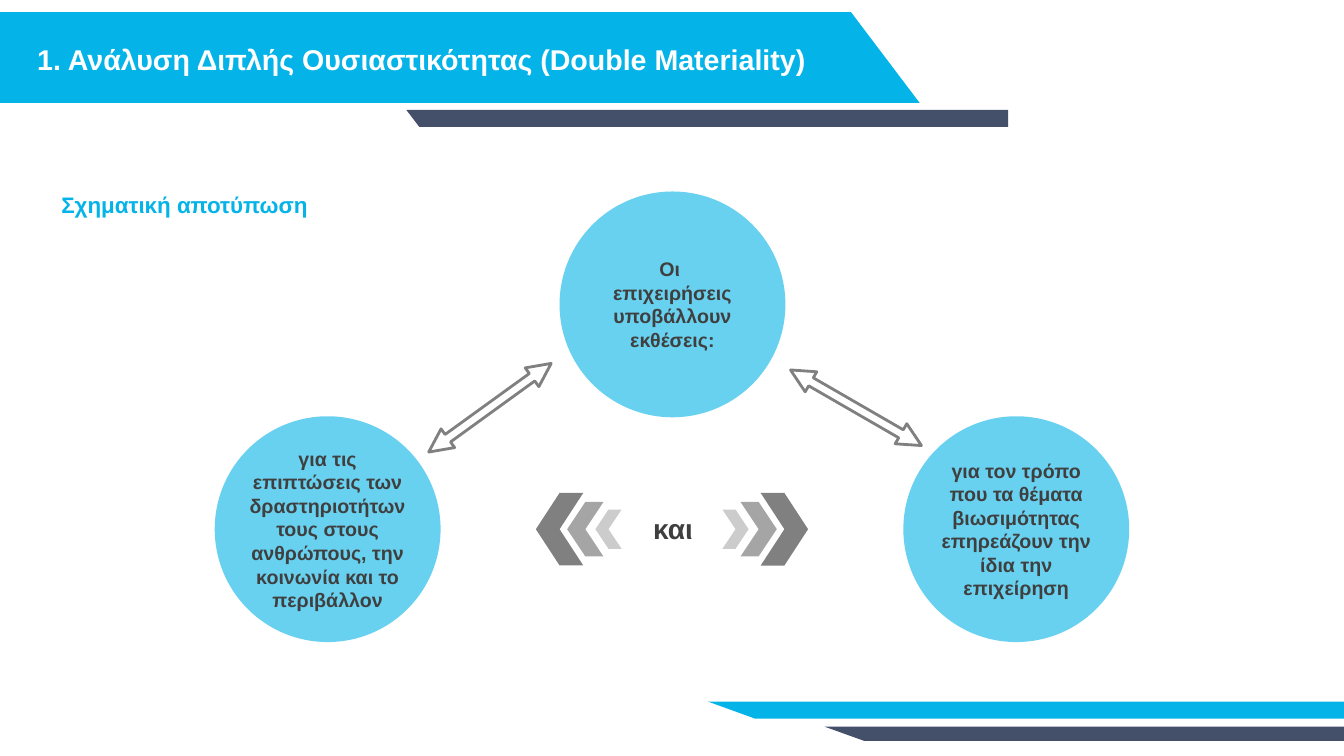
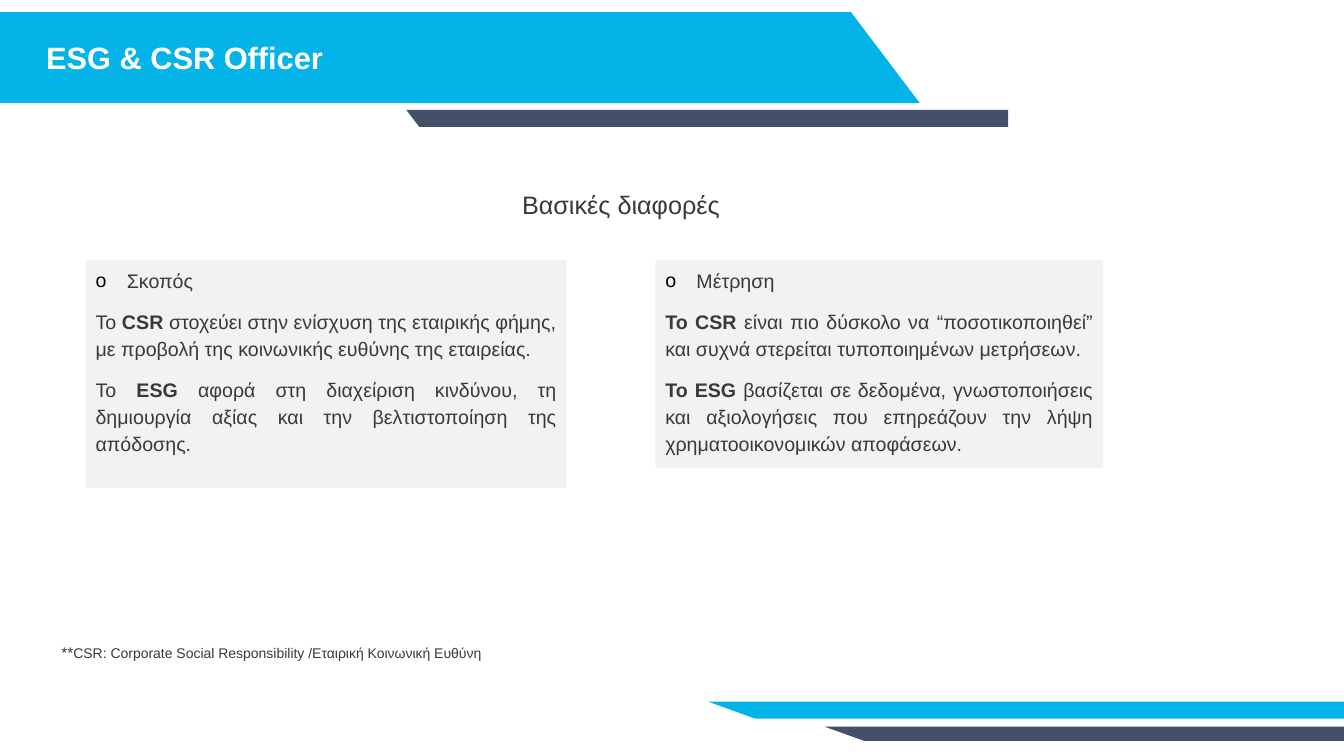
import lxml.etree
import pptx
import pptx.dml.color
import pptx.enum.shapes
import pptx.enum.text
import pptx.oxml.ns
import pptx.util

Inches = pptx.util.Inches
Pt = pptx.util.Pt
RGBColor = pptx.dml.color.RGBColor
Shape = pptx.enum.shapes.MSO_SHAPE
Align = pptx.enum.text.PP_ALIGN
Anchor = pptx.enum.text.MSO_ANCHOR
qn = pptx.oxml.ns.qn

FONT = "Arial"
SKY = RGBColor(0x04, 0xB3, 0xE7)
NAVY = RGBColor(0x44, 0x4F, 0x69)
WHITE = RGBColor(0xFF, 0xFF, 0xFF)
GRAY = RGBColor(0x80, 0x80, 0x80)
PANEL = RGBColor(0xF2, 0xF2, 0xF2)
INK = RGBColor(0x3F, 0x3F, 0x3F)
BODY = RGBColor(0x3B, 0x38, 0x38)

SLIDE_WIDTH, SLIDE_HEIGHT = 13.33, 7.5
BANDS = [
    (SKY, [(0, 0.12), (8.44, 0.12), (9.12, 1.02), (0, 1.02)]),
    (NAVY, [(4.03, 1.09), (10, 1.09), (10, 1.26), (4.16, 1.26)]),
    (SKY, [(7.02, 6.96), (SLIDE_WIDTH, 6.96), (SLIDE_WIDTH, 7.13), (7.49, 7.13)]),
    (NAVY, [(8.18, 7.21), (SLIDE_WIDTH, 7.21), (SLIDE_WIDTH, 7.35), (8.57, 7.35)]),
]
CIRCLE_SIZE = 2.24
CIRCLES = [
    (5.55, 1.9, ["Οι ", "επιχειρήσεις υποβάλλουν εκθέσεις:"]),
    (2.13, 4.13, ["για τις επιπτώσεις των δραστηριοτήτων τους στους "
                  "ανθρώπους, την κοινωνία και το περιβάλλον"]),
    (8.96, 4.13, ["για τον τρόπο που τα θέματα βιωσιμότητας "
                  "επηρεάζουν την ίδια την επιχείρηση"]),
]
CHEVRONS = [(0.5, 0.26, 0.39, 40), (0.68, 0.36, 0.54, 70), (0.88, 0.47, 0.72, 100)]
PANELS = [
    ((0.85, 2.58, 4.77, 2.26), "Σκοπός", [
        [("Το ", False), ("CSR ", True),
         ("στοχεύει στην ενίσχυση της εταιρικής φήμης, με προβολή της "
          "κοινωνικής ευθύνης της εταιρείας.", False)],
        [("Το ", False), ("ESG ", True),
         ("αφορά στη διαχείριση κινδύνου, τη δημιουργία αξίας και την "
          "βελτιστοποίηση της απόδοσης.", False)],
    ]),
    ((6.5, 2.58, 4.44, 2.06), "Μέτρηση", [
        [("Το CSR", True),
         (" είναι πιο δύσκολο να “ποσοτικοποιηθεί” και συχνά στερείται "
          "τυποποιημένων μετρήσεων.", False)],
        [("Το ESG", True),
         (" βασίζεται σε δεδομένα, γνωστοποιήσεις και αξιολογήσεις που "
          "επηρεάζουν την λήψη χρηματοοικονομικών αποφάσεων.", False)],
    ]),
]


def style(font, size, color, bold=False):
    font.name = FONT
    font.size = Pt(size)
    font.bold = bold
    font.color.rgb = color


def paint(shape, color, opacity=100):
    shape.shadow.inherit = False
    shape.line.fill.background()
    shape.fill.solid()
    shape.fill.fore_color.rgb = color
    if opacity < 100:
        tint = shape.fill._xPr.find(qn("a:solidFill"))[0]
        lxml.etree.SubElement(tint, qn("a:alpha"), val=str(opacity * 1000))


def add_shape(page, kind, box):
    return page.shapes.add_shape(kind, *map(Inches, box))


def add_text(page, box, text, size, color, bold=False, align=Align.LEFT, anchor=Anchor.TOP):
    frame = page.shapes.add_textbox(*map(Inches, box)).text_frame
    frame.word_wrap = True
    frame.vertical_anchor = anchor
    para = frame.paragraphs[0]
    para.text = text
    para.alignment = align
    style(para.font, size, color, bold)
    return para


def add_page(deck, title, box, size):
    page = deck.slides.add_slide(deck.slide_layouts[6])
    for color, points in BANDS:
        corners = [(Inches(x), Inches(y)) for x, y in points]
        builder = page.shapes.build_freeform(*corners[0])
        builder.add_line_segments(corners[1:], close=True)
        paint(builder.convert_to_shape(), color)
    add_text(page, box, title, size, WHITE, True, anchor=Anchor.MIDDLE)
    return page


def add_circle(page, left, top, lines):
    circle = add_shape(page, Shape.OVAL, (left, top, CIRCLE_SIZE, CIRCLE_SIZE))
    paint(circle, SKY, 60)
    frame = circle.text_frame
    frame.word_wrap = True
    frame.vertical_anchor = Anchor.MIDDLE
    frame.margin_left = frame.margin_right = 0
    frame.text = "\n".join(lines)
    for para in frame.paragraphs:
        para.alignment = Align.CENTER
        style(para.font, 14, INK, True)


def add_chevrons(page, center, middle, side):
    for offset, width, height, opacity in CHEVRONS:
        left = center + side * (offset + width / 2) - width / 2
        chevron = add_shape(page, Shape.CHEVRON, (left, middle - height / 2, width, height))
        chevron.rotation = 0 if side > 0 else 180
        paint(chevron, GRAY, opacity)


def add_double_arrow(page, left, top, angle):
    arrow = add_shape(page, Shape.LEFT_RIGHT_ARROW, (left, top, 1.5, 0.23))
    arrow.shadow.inherit = False
    arrow.adjustments[0] = 0.4
    arrow.adjustments[1] = 1.02
    arrow.fill.background()
    arrow.line.color.rgb = GRAY
    arrow.line.width = Pt(2)
    arrow.rotation = angle


def add_bullet(para):
    properties = para._p.get_or_add_pPr()
    properties.set("marL", str(Inches(0.31)))
    properties.set("indent", str(-Inches(0.31)))
    color = lxml.etree.SubElement(properties, qn("a:buClr"))
    lxml.etree.SubElement(color, qn("a:srgbClr"), val="000000")
    lxml.etree.SubElement(properties, qn("a:buFont"), typeface=FONT)
    lxml.etree.SubElement(properties, qn("a:buChar"), char="o")


def add_panel(page, box, heading, statements):
    panel = add_shape(page, Shape.RECTANGLE, box)
    paint(panel, PANEL)
    frame = panel.text_frame
    frame.word_wrap = True
    frame.vertical_anchor = Anchor.TOP
    for index, spans in enumerate([[(heading, False)]] + statements):
        para = frame.add_paragraph() if index else frame.paragraphs[0]
        if index == 0:
            add_bullet(para)
        para.alignment = Align.JUSTIFY
        para.line_spacing = 1.15
        para.space_after = Pt(10)
        style(para.font, 14, BODY)
        for text, bold in spans:
            span = para.add_run()
            span.text = text
            span.font.bold = bold


def add_materiality_page(deck):
    page = add_page(deck, "1. Ανάλυση Διπλής Ουσιαστικότητας (Double Materiality)",
                    (0.27, 0.23, 8.19, 0.72), 20.4)
    for circle in CIRCLES:
        add_circle(page, *circle)
    for side in (1, -1):
        add_chevrons(page, SLIDE_WIDTH / 2, 5.25, side)
    add_text(page, (5.9, 5.03, 1.55, 0.44), "και", 20, INK, True, Align.CENTER)
    add_double_arrow(page, 4.11, 3.93, 324.1)
    add_double_arrow(page, 7.74, 3.93, 210)
    add_text(page, (0.51, 1.85, 3.11, 0.37), "Σχηματική αποτύπωση", 16, SKY, True)


def add_differences_page(deck):
    page = add_page(deck, "ESG & CSR Officer", (0.36, 0.21, 8.06, 0.72), 22)
    for panel in PANELS:
        add_panel(page, *panel)
    note = add_text(page, (0.51, 6.33, 4.41, 0.29), "**", 11, BODY)
    span = note.add_run()
    span.text = "CSR: Corporate Social Responsibility /Εταιρική Κοινωνική Ευθύνη"
    span.font.size = Pt(10)
    add_text(page, (5.08, 1.83, 6.67, 0.4), "Βασικές διαφορές", 18, BODY)


def main():
    deck = pptx.Presentation()
    deck.slide_width = Inches(SLIDE_WIDTH)
    deck.slide_height = Inches(SLIDE_HEIGHT)
    add_materiality_page(deck)
    add_differences_page(deck)
    deck.save("out.pptx")


if __name__ == "__main__":
    main()
